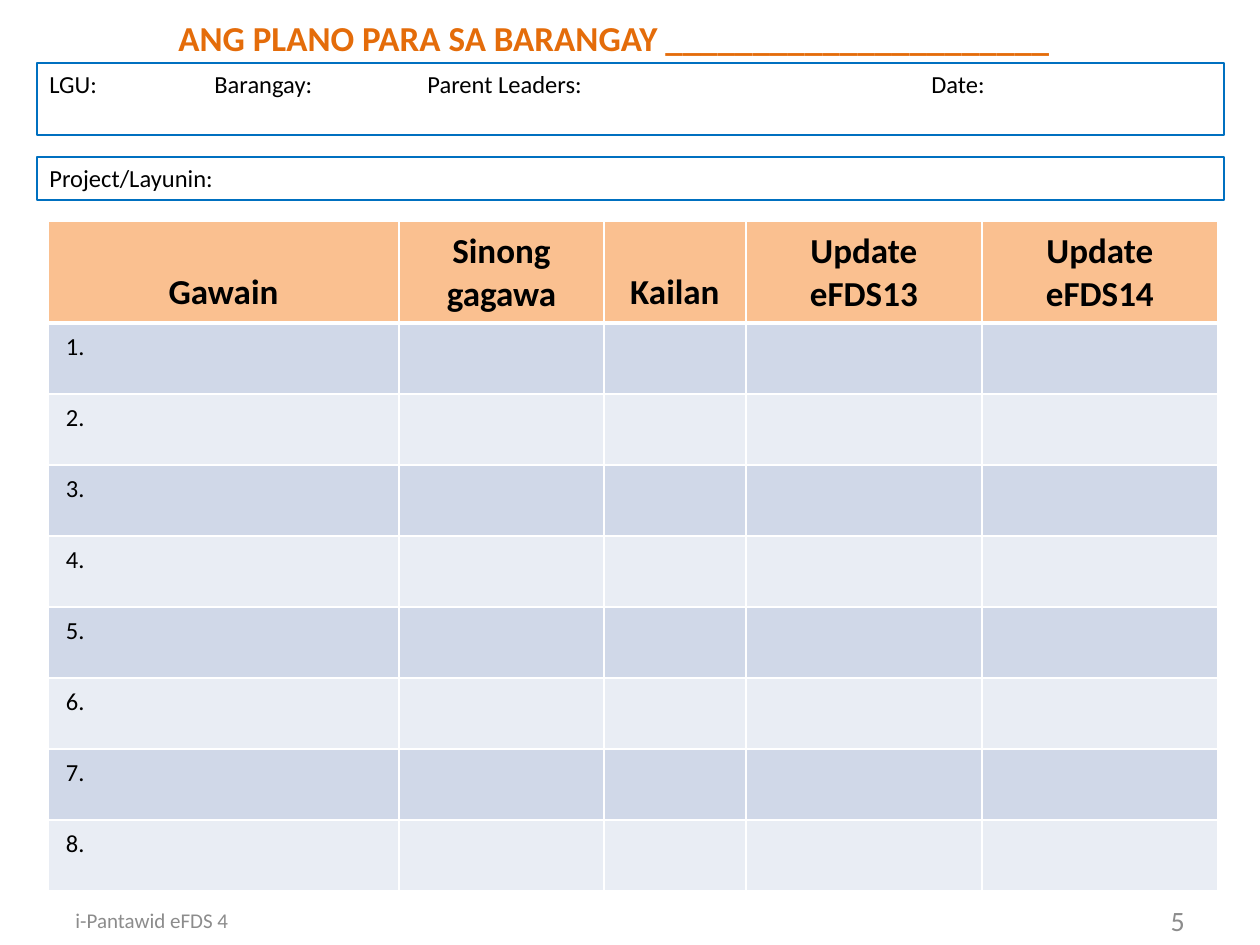
import pptx
import pptx.util
import pptx.dml.color
import pptx.enum.shapes
import pptx.enum.text
import pptx.oxml.ns
from lxml import etree

EMU_PER_PX = 914400 / 126
ALIGN = pptx.enum.text.PP_ALIGN
ANCHOR = pptx.enum.text.MSO_ANCHOR
BLACK, GREY, ORANGE, BLUE = "000000", "8C8C8C", "E46C0A", "0070C0"
HEAD_FILL, BAND_FILLS = "FAC090", ("E9EDF4", "D0D8E8")


def px(length):
    return pptx.util.Emu(round(length * EMU_PER_PX))


def color(code):
    return pptx.dml.color.RGBColor.from_string(code)


def write(frame, text, size, code=BLACK, bold=False, align=ALIGN.LEFT):
    para = frame.paragraphs[0]
    para.text = text
    para.alignment = align
    para.font.name = "Calibri"
    para.font.size = pptx.util.Pt(size)
    para.font.bold = bold
    para.font.color.rgb = color(code)
    return para


def add_label(page, box, text, size, code, wrap=True, anchor=ANCHOR.TOP, **style):
    frame = page.shapes.add_textbox(*map(px, box)).text_frame
    frame.word_wrap = wrap
    frame.vertical_anchor = anchor
    write(frame, text, size, code, **style)


def add_field_box(page, box, labels, stops=()):
    """Outlined box whose labels start at tab stops."""
    shape = page.shapes.add_shape(
        pptx.enum.shapes.MSO_SHAPE.RECTANGLE, *map(px, box))
    shape.shadow.inherit = False
    shape.fill.background()
    shape.line.color.rgb = color(BLUE)
    shape.line.width = pptx.util.Pt(0.75)
    frame = shape.text_frame
    frame.word_wrap = True
    frame.vertical_anchor = ANCHOR.TOP
    para = write(frame, "\t".join(labels), 14)
    if stops:
        tabs = etree.Element(pptx.oxml.ns.qn("a:tabLst"))
        for stop in stops:
            etree.SubElement(tabs, pptx.oxml.ns.qn("a:tab"),
                             pos=str(px(stop)), algn="l")
        para._p.get_or_add_pPr().insert(0, tabs)


def set_borders(cell, top, bottom):
    """White cell borders; top and bottom widths in points."""
    widths = {"lnL": 1, "lnR": 1, "lnT": top, "lnB": bottom}
    for place, (side, width) in enumerate(widths.items()):
        line = etree.Element(pptx.oxml.ns.qn("a:" + side),
                             w=str(pptx.util.Pt(width)))
        fill = etree.SubElement(line, pptx.oxml.ns.qn("a:solidFill"))
        etree.SubElement(fill, pptx.oxml.ns.qn("a:srgbClr"), val="FFFFFF")
        cell._tc.get_or_add_tcPr().insert(place, line)


def add_plan_table(page, box, headings, widths, head_height, count):
    left, top, width, height = box
    table = page.shapes.add_table(
        count + 1, len(headings), *map(px, box)).table
    for column, column_width in zip(table.columns, widths):
        column.width = px(column_width)
    for number, row in enumerate(table.rows):
        is_head = number == 0
        row.height = px(head_height if is_head else (height - head_height) / count)
        for place, cell in enumerate(row.cells):
            cell.fill.solid()
            cell.fill.fore_color.rgb = color(
                HEAD_FILL if is_head else BAND_FILLS[number % 2])
            set_borders(cell, 3 if number == 1 else 1, 3 if is_head else 1)
            cell.margin_left = cell.margin_right = px(18)
            cell.margin_top = cell.margin_bottom = px(9)
            if is_head:
                cell.vertical_anchor = ANCHOR.BOTTOM
                write(cell.text_frame, headings[place], 20, bold=True,
                      align=ALIGN.CENTER)
            elif place == 0:
                write(cell.text_frame, f"{number}.", 14)


def add_footer(page, box, text, number):
    left, top, width, height = box
    part = 294
    add_label(page, (left, top, part, height), text, 12, GREY,
              anchor=ANCHOR.MIDDLE)
    add_label(page, (left + width - part, top, part, height), number, 16, GREY,
              anchor=ANCHOR.MIDDLE, align=ALIGN.RIGHT)


def main():
    deck = pptx.Presentation()
    deck.slide_width, deck.slide_height = px(1260), px(945)
    page = deck.slides.add_slide(deck.slide_layouts[6])

    # Title
    add_label(page, (166, 10, 905, 55),
              "ANG PLANO PARA SA BARANGAY " + "_" * 22, 20, ORANGE,
              wrap=False, bold=True)

    # Fields to fill in
    add_field_box(page, (37, 63, 1187, 72),
                  ("LGU:", "Barangay:", "Parent Leaders:", "Date:"),
                  stops=(165, 378, 882))
    add_field_box(page, (37, 157, 1187, 43), ("Project/Layunin:",))

    # Plan
    add_plan_table(page, (48, 221, 1170, 668),
                   ("Gawain", "Sinong gagawa", "Kailan",
                    "Update eFDS13", "Update eFDS14"),
                   (351, 205, 142, 236, 236), head_height=100, count=8)

    # Footer
    add_footer(page, (63, 895, 1134, 50), "i-Pantawid eFDS 4", "5")

    deck.save("out.pptx")


if __name__ == "__main__":
    main()
